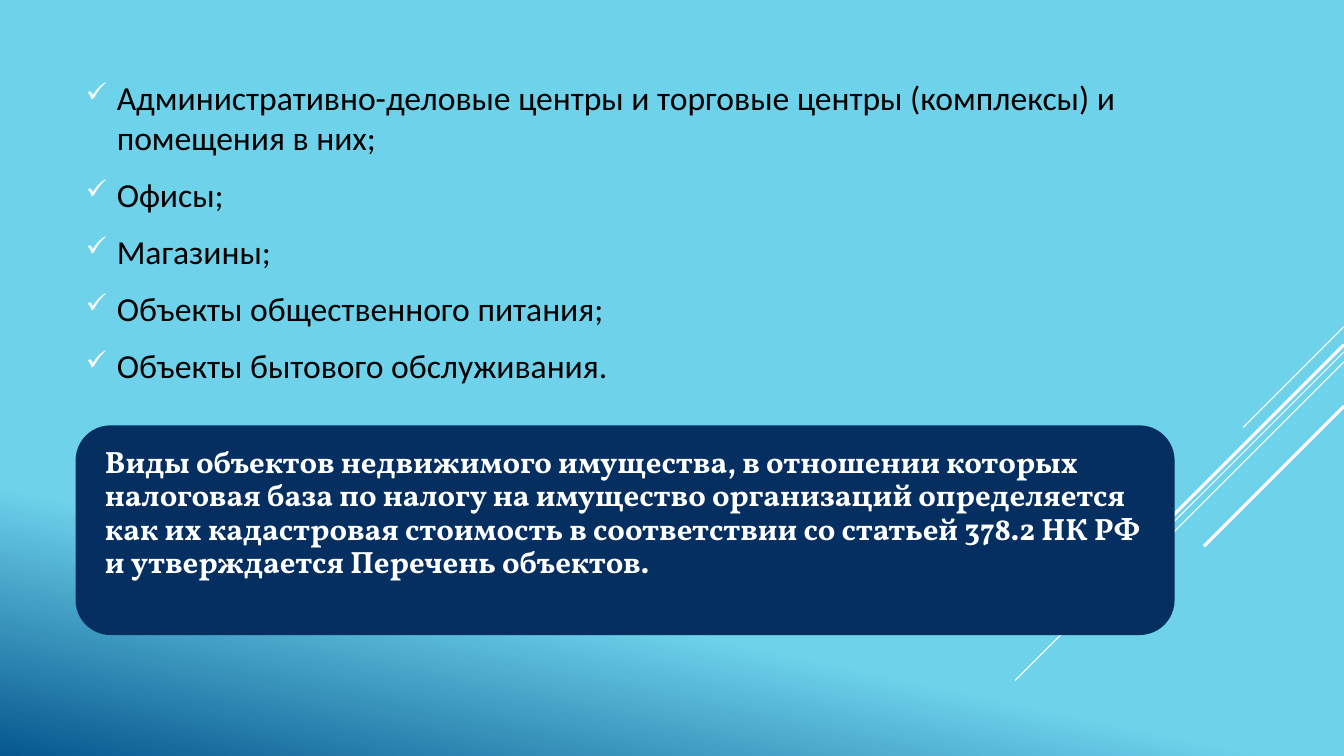
import pptx
import pptx.util
import pptx.dml.color
import pptx.enum.shapes
import pptx.enum.text
import pptx.oxml
import pptx.oxml.ns
from lxml import etree

Inches, Pt = pptx.util.Inches, pptx.util.Pt
RGB = pptx.dml.color.RGBColor.from_string
qn = pptx.oxml.ns.qn
COLORS = {"sky": "6ED2EB", "deep": "06588E", "navy": "052F61",
          "white": "FFFFFF", "black": "000000"}


def add_run(p, text, font, size, color, bold=False):
    r = p.add_run()
    r.text = text
    r.font.name = font
    r.font.size = Pt(size)
    r.font.bold = bold
    r.font.color.rgb = RGB(COLORS[color])


def add_check_bullet(p):
    """Give the paragraph a hanging white check mark at 80% of the text size."""
    pPr = p._p.get_or_add_pPr()
    pPr.set("marL", str(Inches(0.31)))
    pPr.set("indent", str(-Inches(0.31)))
    color = etree.SubElement(pPr, qn("a:buClr"))
    etree.SubElement(color, qn("a:srgbClr"), val=COLORS["white"])
    etree.SubElement(pPr, qn("a:buSzPct"), val="80000")
    etree.SubElement(pPr, qn("a:buFont"), typeface="Wingdings")
    etree.SubElement(pPr, qn("a:buChar"), char="ü")


prs = pptx.Presentation()
prs.slide_width, prs.slide_height = Inches(13.33), Inches(7.5)
s = prs.slides.add_slide(prs.slide_layouts[6])

# Background gradient, darkest at the bottom left
fill = s.background.fill
fill.gradient()
fill.gradient_angle = 258
for stop, position, color in zip(fill.gradient_stops, (0.74, 1), ("sky", "deep")):
    stop.position = position
    stop.color.rgb = RGB(COLORS[color])

# Diagonal rays at 45 degrees from the right edge: start height, run, line width
right = 13.33
for top, run, width in [(3.24, 1, 0.75), (3.49, 3.26, 0.75), (3.59, 2.07, 0.75),
                        (3.42, 1.91, 2.25), (4.03, 1.39, 2.25)]:
    ray = s.shapes.add_connector(pptx.enum.shapes.MSO_CONNECTOR.STRAIGHT,
                                 Inches(right), Inches(top),
                                 Inches(right - run), Inches(top + run))
    ray.line.color.rgb = RGB(COLORS["white"])
    ray.line.width = Pt(width)
    etree.SubElement(ray._element.spPr, qn("a:effectLst"))

# Callout
callout = s.shapes.add_shape(pptx.enum.shapes.MSO_SHAPE.ROUNDED_RECTANGLE,
                             Inches(0.75), Inches(4.22), Inches(10.9), Inches(2.08))
callout.shadow.inherit = False
callout.fill.solid()
callout.fill.fore_color.rgb = RGB(COLORS["navy"])
callout.line.fill.background()
tf = callout.text_frame
tf.word_wrap = True
tf.vertical_anchor = pptx.enum.text.MSO_ANCHOR.MIDDLE
tf.margin_left = tf.margin_right = Inches(0.19)
tf.margin_top, tf.margin_bottom = Inches(0.09), Inches(0.42)
p = tf.paragraphs[0]
p.alignment = pptx.enum.text.PP_ALIGN.LEFT
p.line_spacing = 0.9
add_run(p, "Виды объектов недвижимого имущества, в отношении которых налоговая база "
           "по налогу на имущество организаций определяется как их кадастровая "
           "стоимость в соответствии со статьей 378.2 НК РФ",
        "Vollkorn", 22, "white", True)
p.add_line_break()
add_run(p, "и утверждается Перечень объектов.", "Vollkorn", 22, "white", True)

# List of property types
body = s.shapes.add_textbox(Inches(0.75), Inches(0.28), Inches(11.08), Inches(4.42))
tf = body.text_frame
tf.word_wrap = True
tf.margin_top = Inches(0.48)
property_types = [
    "Административно-деловые центры и торговые центры (комплексы) и помещения в них;",
    "Офисы;",
    "Магазины;",
    "Объекты общественного питания;",
    "Объекты бытового обслуживания.",
]
for i, text in enumerate(property_types):
    p = tf.add_paragraph() if i else tf.paragraphs[0]
    p.space_before, p.space_after = Pt(0), Pt(12)
    add_check_bullet(p)
    add_run(p, text, "Calibri", 24, "black")

prs.save("out.pptx")
